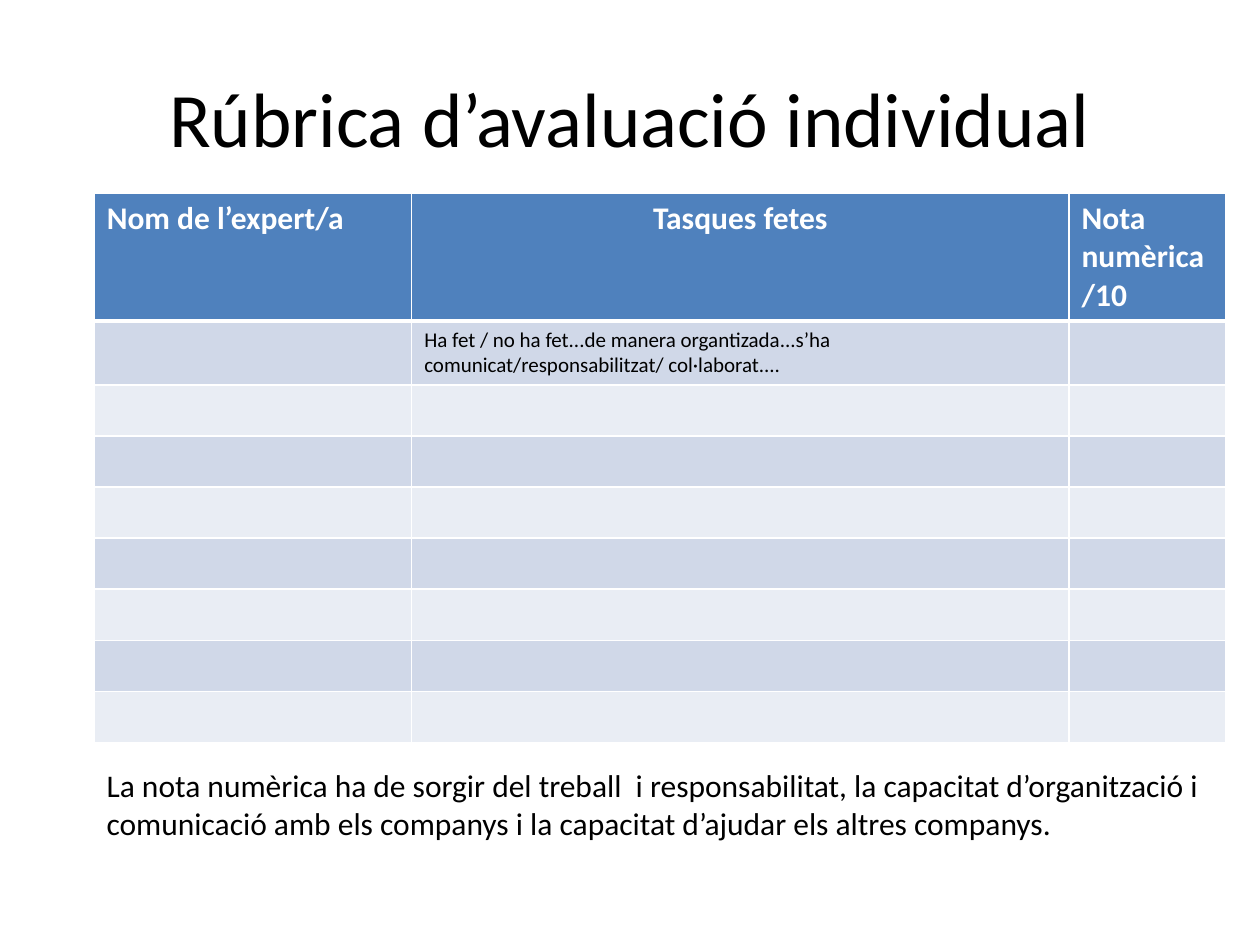
from lxml import etree
from pptx import Presentation
from pptx.dml.color import RGBColor
from pptx.enum.text import MSO_ANCHOR, PP_ALIGN
from pptx.oxml.ns import qn
from pptx.util import Cm, Pt

LEFT, CENTER = PP_ALIGN.LEFT, PP_ALIGN.CENTER
MIDDLE = MSO_ANCHOR.MIDDLE
TITLE_ONLY = 5
FONT = "Calibri"
COLORS = {
    "text": "000000",
    "white": "FFFFFF",
    "header": "4F81BD",
    "band_dark": "D0D8E8",
    "band_light": "E9EDF4",
}
MARGIN, CONTENT_WIDTH = Cm(1.9), Cm(22.8)
COLUMN_WIDTHS = (6.4, 13.25, 3.15)
ROW_COUNT, ROW_HEIGHT = 9, Cm(1.03)
HEADERS = (("Nom de l’expert/a", LEFT), ("Tasques fetes", CENTER), ("Nota numèrica/10", LEFT))
TASK_EXAMPLE = ("Ha fet / no ha fet...de manera organtizada...s’ha "
                "comunicat/responsabilitzat/ col·laborat....")
NOTE = ("La nota numèrica ha de sorgir del treball  i responsabilitat, "
        "la capacitat d’organització i comunicació amb els companys "
        "i la capacitat d’ajudar els altres companys.")


def rgb(name):
    return RGBColor.from_string(COLORS[name])


def write(tf, text, size, color="text", bold=False, align=LEFT):
    p = tf.paragraphs[0]
    p.alignment = align
    r = p.add_run()
    r.text = text
    r.font.name = FONT
    r.font.size = Pt(size)
    r.font.bold = bold
    r.font.color.rgb = rgb(color)


def set_borders(cell, bottom=1):
    """Draw white cell borders, in points; they must precede the fill."""
    tc_pr = cell._tc.get_or_add_tcPr()
    for i, (side, width) in enumerate((("L", 1), ("R", 1), ("T", 1), ("B", bottom))):
        ln = etree.Element(qn(f"a:ln{side}"), w=str(Pt(width)))
        fill = etree.SubElement(ln, qn("a:solidFill"))
        etree.SubElement(fill, qn("a:srgbClr"), val=COLORS["white"])
        tc_pr.insert(i, ln)


def style_cell(cell, row):
    if row == 0:
        color = "header"
    else:
        color = "band_dark" if row % 2 else "band_light"
    cell.fill.solid()
    cell.fill.fore_color.rgb = rgb(color)
    set_borders(cell, bottom=3 if row == 0 else 1)


def add_title(s, text):
    sp = s.shapes.title
    sp.left, sp.top, sp.width, sp.height = Cm(1.27), Cm(0.76), Cm(22.86), Cm(3.18)
    sp.text_frame.vertical_anchor = MIDDLE
    write(sp.text_frame, text, 44, align=CENTER)


def add_rubric(s):
    frame = s.shapes.add_table(ROW_COUNT, len(COLUMN_WIDTHS), MARGIN, Cm(3.89),
                               CONTENT_WIDTH, ROW_HEIGHT * ROW_COUNT)
    table = frame.table
    for column, width in zip(table.columns, COLUMN_WIDTHS):
        column.width = Cm(width)
    for i, row in enumerate(table.rows):
        row.height = ROW_HEIGHT
        for cell in row.cells:
            style_cell(cell, i)
    for i, (text, align) in enumerate(HEADERS):
        write(table.cell(0, i).text_frame, text, 18, "white", True, align)
    write(table.cell(1, 1).text_frame, TASK_EXAMPLE, 12)
    # Wrapped text makes the first two rows taller than ROW_HEIGHT.
    frame.height = Cm(11.02)


def add_note(s, text):
    sp = s.shapes.add_textbox(MARGIN, Cm(15.32), CONTENT_WIDTH, Cm(1.8))
    sp.text_frame.word_wrap = True
    write(sp.text_frame, text, 18)


def main():
    prs = Presentation()
    prs.slide_width, prs.slide_height = Cm(25.4), Cm(19.05)
    s = prs.slides.add_slide(prs.slide_layouts[TITLE_ONLY])
    add_title(s, "Rúbrica d’avaluació individual")
    add_rubric(s)
    add_note(s, NOTE)
    prs.save("out.pptx")


if __name__ == "__main__":
    main()
